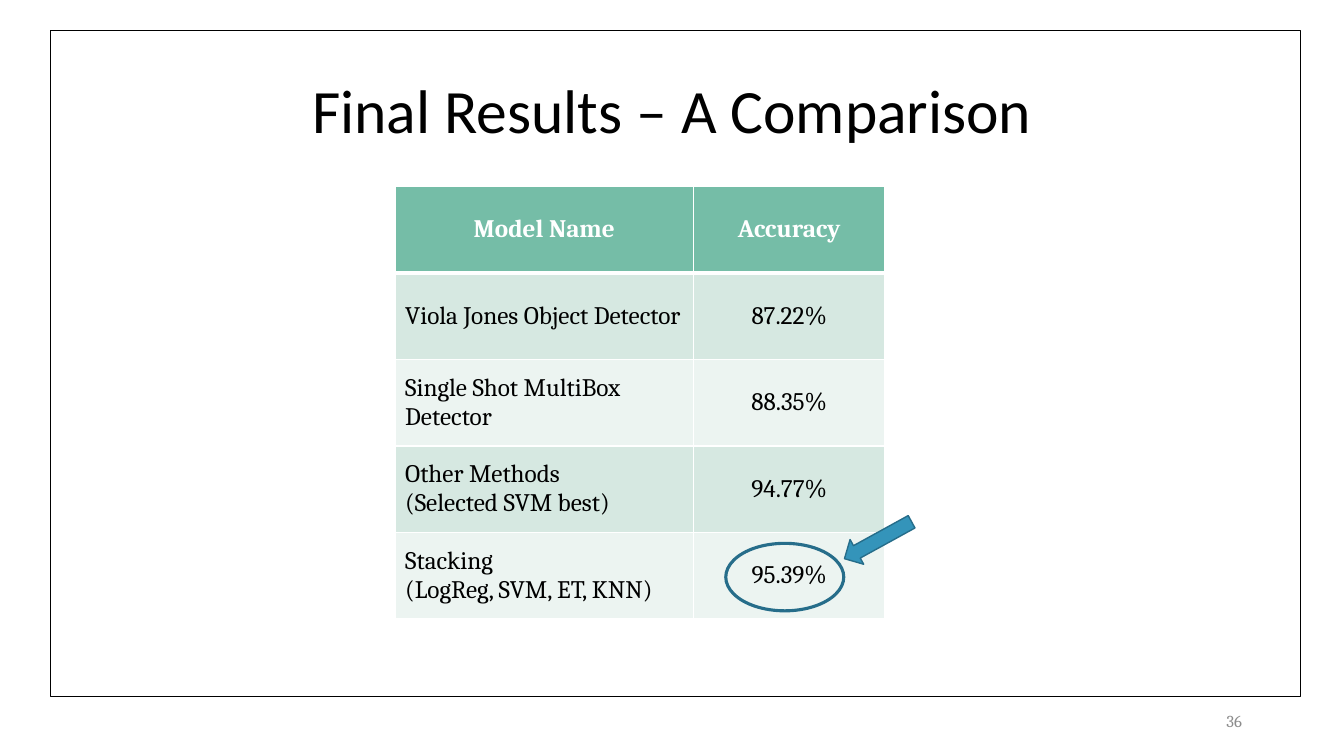
from dataclasses import dataclass
from typing import Optional

from lxml.etree import SubElement as Sub
from pptx import Presentation
from pptx.dml.color import RGBColor
from pptx.enum.shapes import MSO_SHAPE as Kind
from pptx.enum.text import MSO_ANCHOR as Anchor, PP_ALIGN as Align
from pptx.oxml.ns import qn
from pptx.util import Emu, Inches, Pt

BLACK = RGBColor(0x00, 0x00, 0x00)
WHITE = RGBColor(0xFF, 0xFF, 0xFF)
GRAY = RGBColor(0x8C, 0x8C, 0x8C)
GREEN = RGBColor(0x75, 0xBD, 0xA7)
MINT = RGBColor(0xD6, 0xE8, 0xE1)
PALE = RGBColor(0xEC, 0xF4, 0xF1)
BLUE = RGBColor(0x34, 0x94, 0xBA)
NAVY = RGBColor(0x26, 0x6D, 0x8A)

WIDE, HIGH = Inches(13.333), Inches(7.5)


@dataclass
class Box:
    """Left, top, width and height in percent of the slide."""
    x: float
    y: float
    w: float
    h: float

    def span(self) -> tuple:
        return (across(self.x), down(self.y), across(self.w), down(self.h))


@dataclass
class Style:
    size: float
    font: str
    color: RGBColor
    bold: bool = False
    align: Align = Align.LEFT


@dataclass
class Label:
    text: str
    box: Box
    style: Style
    space: float = 1.0


@dataclass
class Mark:
    kind: Kind
    box: Box
    line: RGBColor
    width: float
    fill: Optional[RGBColor] = None
    turn: float = 0


def across(share: float) -> Emu:
    return Emu(round(WIDE * share / 100))


def down(share: float) -> Emu:
    return Emu(round(HIGH * share / 100))


def write(para, text: str, style: Style) -> None:
    """Fill a paragraph; a vertical bar in the text breaks the line."""
    para.alignment = style.align
    for i, part in enumerate(text.split("|")):
        if i:
            para.add_line_break()
        run = para.add_run()
        run.text = part
        run.font.size = Pt(style.size)
        run.font.name = style.font
        run.font.bold = style.bold
        run.font.color.rgb = style.color


def add_label(slide, label: Label) -> None:
    frame = slide.shapes.add_textbox(*label.box.span()).text_frame
    frame.word_wrap = True
    frame.vertical_anchor = Anchor.MIDDLE
    para = frame.paragraphs[0]
    para.line_spacing = label.space
    write(para, label.text, label.style)


def add_mark(slide, mark: Mark) -> None:
    shape = slide.shapes.add_shape(mark.kind, *mark.box.span())
    shape.shadow.inherit = False
    shape.rotation = mark.turn
    shape.line.color.rgb = mark.line
    shape.line.width = Pt(mark.width)
    if mark.fill is None:
        shape.fill.background()
    else:
        shape.fill.solid()
        shape.fill.fore_color.rgb = mark.fill


def edge(cell, top: float, base: float) -> None:
    """Draw white borders; call before the cell gets its fill."""
    props = cell._tc.get_or_add_tcPr()
    for side, width in zip("LRTB", (1, 1, top, base)):
        line = Sub(props, qn(f"a:ln{side}"), w=str(Pt(width)))
        Sub(Sub(line, qn("a:solidFill")), qn("a:srgbClr"), val=str(WHITE))


def add_grid(slide, rows: list, box: Box, cols: tuple) -> None:
    table = slide.shapes.add_table(len(rows), len(cols), *box.span()).table
    for col, share in zip(table.columns, cols):
        col.width = across(share)
    for r, row in enumerate(rows):
        table.rows[r].height = down(box.h / len(rows))
        tint = GREEN if r == 0 else (PALE, MINT)[r % 2]
        for c, text in enumerate(row):
            cell = table.cell(r, c)
            edge(cell, 3 if r == 1 else 1, 3 if r == 0 else 1)
            cell.fill.solid()
            cell.fill.fore_color.rgb = tint
            cell.vertical_anchor = Anchor.MIDDLE
            style = HEAD if r == 0 else (NAME, SCORE)[c]
            frame = cell.text_frame
            for i, line in enumerate(text.split("\n")):
                para = frame.add_paragraph() if i else frame.paragraphs[0]
                write(para, line, style)


# Text styles
HEAD = Style(18, "Cambria", WHITE, True, Align.CENTER)
NAME = Style(18, "Cambria", BLACK)
SCORE = Style(18, "Cambria", BLACK, align=Align.CENTER)
TITLE = Style(44, "Calibri", BLACK, align=Align.CENTER)
PAGE = Style(12, "Cambria", GRAY, align=Align.RIGHT)

# Content
LABELS = [
    Label("Final Results – A Comparison", Box(6.9, 5.33, 86.25, 19.33), TITLE, 0.9),
    Label("36", Box(70.65, 92.67, 22.5, 5.33), PAGE),
]
MODELS = [
    ("Model Name", "Accuracy"),
    ("Viola Jones Object Detector", "87.22%"),
    ("Single Shot MultiBox Detector", "88.35%"),
    ("Other Methods |(Selected SVM best)", "94.77%"),
    ("Stacking\n(LogReg, SVM, ET, KNN)", "95.39%"),
]
MARKS = [
    Mark(Kind.RECTANGLE, Box(3.75, 4, 93, 88.13), BLACK, 0.75),
    Mark(Kind.DOWN_ARROW, Box(64.28, 66.4, 2.1, 10.13), NAVY, 1, BLUE, 61.2),
    Mark(Kind.OVAL, Box(54, 71.87, 8.78, 8.93), NAVY, 2.25),
]


def main() -> None:
    deck = Presentation()
    deck.slide_width, deck.slide_height = WIDE, HIGH
    slide = deck.slides.add_slide(deck.slide_layouts[6])
    add_grid(slide, MODELS, Box(29.4, 24.67, 36.45, 57.2), (22.2, 14.25))
    for label in LABELS:
        add_label(slide, label)
    for mark in MARKS:
        add_mark(slide, mark)
    deck.save("out.pptx")


if __name__ == "__main__":
    main()
